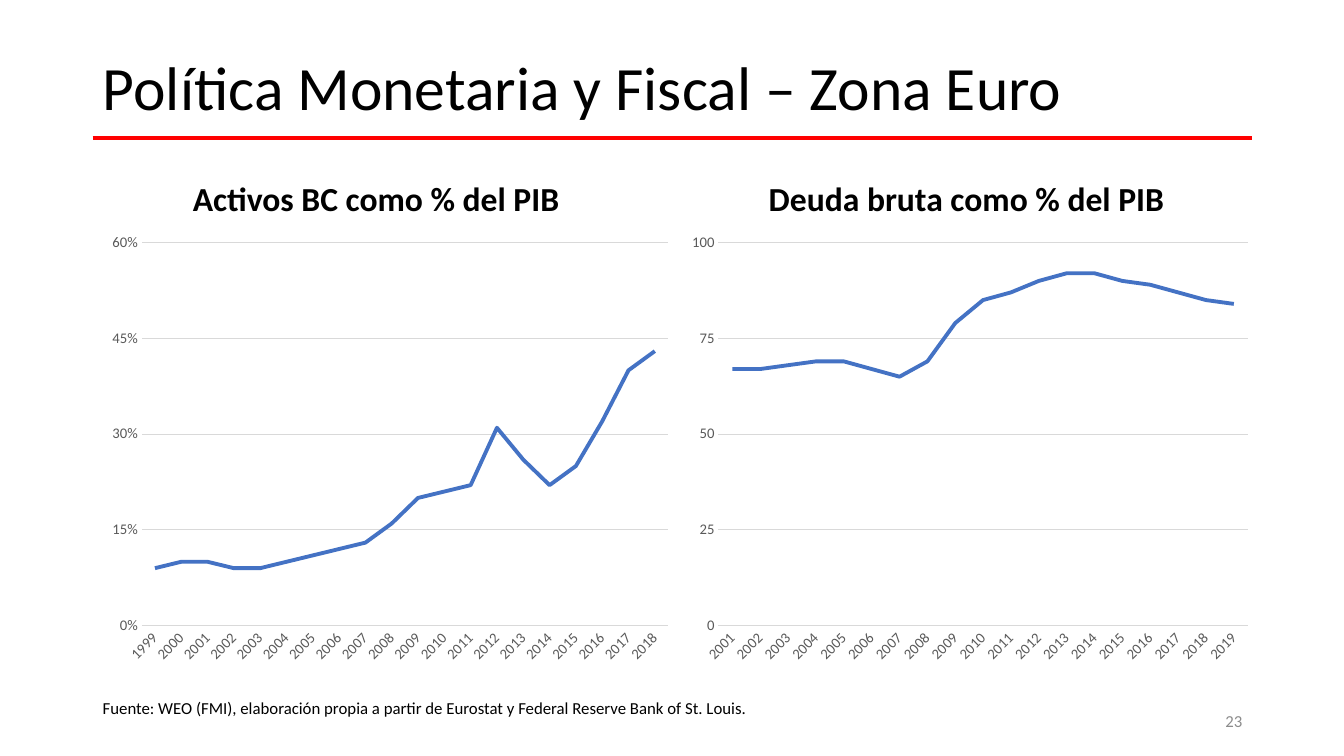
from dataclasses import dataclass

from lxml import etree
from pptx import Presentation
from pptx.chart.data import CategoryChartData
from pptx.dml.color import RGBColor as Rgb
from pptx.enum import chart as ch, shapes, text as tx
from pptx.oxml import ns
from pptx.util import Inches, Pt


@dataclass(frozen=True)
class Theme:
    font: str = "Calibri"
    black: Rgb = Rgb(0, 0, 0)
    red: Rgb = Rgb(255, 0, 0)
    blue: Rgb = Rgb(0x44, 0x72, 0xC4)
    label: Rgb = Rgb(0x59, 0x59, 0x59)
    number: Rgb = Rgb(0x8C, 0x8C, 0x8C)
    grid: Rgb = Rgb(0xD9, 0xD9, 0xD9)
    title: float = 44
    head: float = 24
    small: float = 12
    axis: float = 10.5


theme = Theme()


def style(font, size, color, bold=False):
    font.name, font.size, font.bold = theme.font, Pt(size), bold
    font.color.rgb = color


def write(box, area, words, size, color, align, anchor, bold=False):
    box.left, box.top, box.width, box.height = map(Inches, area)
    frame = box.text_frame
    frame.text = words
    frame.word_wrap = True
    frame.auto_size = tx.MSO_AUTO_SIZE.NONE
    frame.vertical_anchor = anchor
    par = frame.paragraphs[0]
    par.alignment = align
    style(par.font, size, color, bold)
    return par


deck = Presentation()
deck.slide_width, deck.slide_height = Inches(13.33), Inches(7.5)
slide = deck.slides.add_slide(deck.slide_layouts[4])
left, right, center = tx.PP_ALIGN.LEFT, tx.PP_ALIGN.RIGHT, tx.PP_ALIGN.CENTER
top, middle, bottom = (tx.MSO_ANCHOR.TOP, tx.MSO_ANCHOR.MIDDLE,
                       tx.MSO_ANCHOR.BOTTOM)

# Title and red rule
par = write(slide.shapes.title, (0.92, 0.17, 11.5, 1.45),
            "Política Monetaria y Fiscal – Zona Euro",
            theme.title, theme.black, left, middle)
par.line_spacing = 0.9
rule = slide.shapes.add_connector(shapes.MSO_CONNECTOR.STRAIGHT, Inches(0.92),
                                  Inches(1.37), Inches(12.42), Inches(1.37))
rule.line.color.rgb, rule.line.width = theme.red, Pt(3)
etree.SubElement(rule._element.spPr, ns.qn("a:effectLst"))

# Two panels: placeholder, heading area, chart left, first year, step, format
assets = [0.09, 0.1, 0.1, 0.09, 0.09, 0.1, 0.11, 0.12, 0.13, 0.16,
          0.2, 0.21, 0.22, 0.31, 0.26, 0.22, 0.25, 0.32, 0.4, 0.43]
debt = [67, 67, 68, 69, 69, 67, 65, 69, 79, 85,
        87, 90, 92, 92, 90, 89, 87, 85, 84]
panels = [
    (1, "Activos BC como % del PIB", (0.91, 1.73, 5.64, 0.49),
     1, 1999, assets, 0.15, "0%"),
    (3, "Deuda bruta como % del PIB", (6.75, 1.73, 5.67, 0.49),
     6.75, 2001, debt, 25, "0"),
]
for slot, head, area, x, start, values, step, form in panels:
    par = write(slide.placeholders[slot], area, head,
                theme.head, theme.black, center, bottom, True)
    par.line_spacing, par.space_before = 0.9, Pt(10)

    data = CategoryChartData(number_format=form)
    data.categories = [str(start + i) for i in range(len(values))]
    data.add_series(head, values)
    chart = slide.shapes.add_chart(ch.XL_CHART_TYPE.LINE, Inches(x), Inches(2.23),
                                   Inches(5.74), Inches(4.44), data).chart
    chart.has_title = chart.has_legend = False
    style(chart.font, 10, theme.black)
    chart.plots[0].vary_by_categories = False
    curve = chart.plots[0].series[0]
    curve.smooth = False
    curve.marker.style = ch.XL_MARKER_STYLE.NONE
    curve.format.line.color.rgb = theme.blue
    curve.format.line.width = Pt(2.75)

    years, scale = chart.category_axis, chart.value_axis
    for axis in (years, scale):
        axis.major_tick_mark = axis.minor_tick_mark = ch.XL_TICK_MARK.NONE
        style(axis.tick_labels.font, theme.axis, theme.label)
    scale.minimum_scale, scale.maximum_scale = 0, 4 * step
    scale.major_unit = step
    scale.tick_labels.number_format = form
    scale.tick_labels.number_format_is_linked = False
    scale.format.line.fill.background()
    scale.has_major_gridlines = True
    for line in (years.format.line, scale.major_gridlines.format.line):
        line.color.rgb, line.width = theme.grid, Pt(0.75)
    # Slant the years by 45 degrees
    years._element.find(".//" + ns.qn("a:bodyPr")).set("rot", "-2700000")

# Source note and slide number
for area, words, color, align, anchor in [
    ((0.92, 6.87, 6.72, 0.3),
     "Fuente: WEO (FMI), elaboración propia a partir de Eurostat y "
     "Federal Reserve Bank of St. Louis.", theme.black, left, top),
    ((9.42, 6.95, 3, 0.4), "23", theme.number, right, middle),
]:
    box = slide.shapes.add_textbox(0, 0, 0, 0)
    write(box, area, words, theme.small, color, align, anchor)

# Remove the empty placeholders
for slot in list(slide.placeholders):
    if not slot.text_frame.text:
        slot._element.getparent().remove(slot._element)

deck.save("out.pptx")
